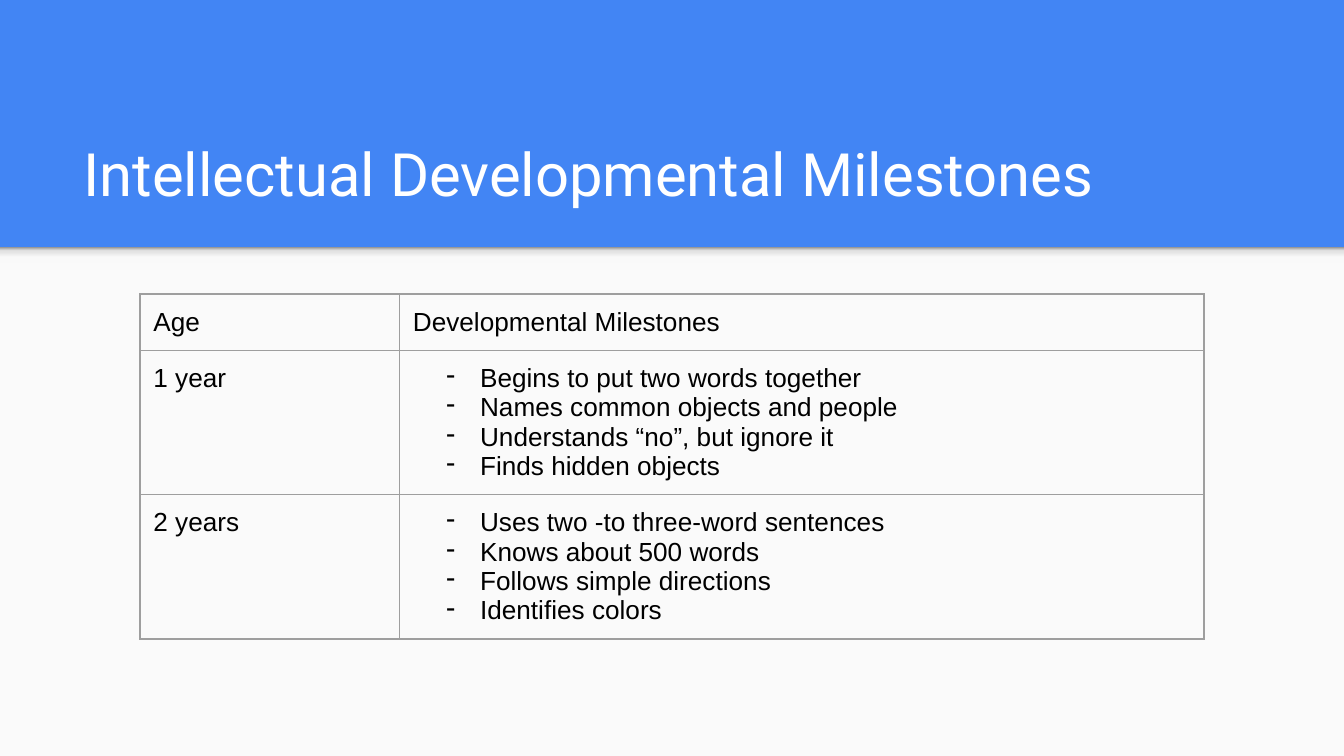
from lxml.etree import SubElement
from pptx import Presentation
from pptx.dml.color import RGBColor
from pptx.enum.shapes import MSO_SHAPE
from pptx.enum.text import MSO_ANCHOR, PP_ALIGN
from pptx.oxml.ns import qn
from pptx.util import Pt

COLORS = {
    "blue": "4285F4",
    "paper": "FAFAFA",
    "white": "FFFFFF",
    "black": "000000",
    "border": "9E9E9E",
}
SHADOW_STOPS = [(0, "F9F9F9"), (36, "F9F9F9"), (80, "DEDEDE"), (100, "999999")]
MILESTONES = [
    ("Age", ["Developmental Milestones"]),
    ("1 year", [
        "Begins to put two words together",
        "Names common objects and people",
        "Understands “no”, but ignore it",
        "Finds hidden objects",
    ]),
    ("2 years", [
        "Uses two -to three-word sentences",
        "Knows about 500 words",
        "Follows simple directions",
        "Identifies colors",
    ]),
]
COLUMN_WIDTHS = [139, 431]
ROW_HEIGHT = 30
HEADER_HEIGHT = 132.5
INSET = Pt(7.2)


def add_text(paragraph, text, font, size, color):
    run = paragraph.add_run()
    run.text = text
    run.font.name = font
    run.font.size = Pt(size)
    run.font.color.rgb = RGBColor.from_string(COLORS[color])


def add_band(slide, top, height):
    band = slide.shapes.add_shape(
        MSO_SHAPE.RECTANGLE, 0, Pt(top), Pt(720), Pt(height))
    band.shadow.inherit = False
    band.line.fill.background()
    return band


prs = Presentation()
prs.slide_width, prs.slide_height = Pt(720), Pt(405)
slide = prs.slides.add_slide(prs.slide_layouts[5])
slide.background.fill.solid()
slide.background.fill.fore_color.rgb = RGBColor.from_string(COLORS["blue"])

# Light body area below the blue header
body = add_band(slide, HEADER_HEIGHT, 405 - HEADER_HEIGHT)
body.fill.solid()
body.fill.fore_color.rgb = RGBColor.from_string(COLORS["paper"])

# Soft shadow under the header, darkest at its top edge
header_shadow = add_band(slide, HEADER_HEIGHT, 8.5)
header_shadow.fill.gradient()
header_shadow.fill.gradient_angle = 90
stop_list = header_shadow.fill.gradient_stops[0]._gs.getparent()
for default_stop in list(stop_list):
    stop_list.remove(default_stop)
for percent, color in SHADOW_STOPS:
    stop = SubElement(stop_list, qn("a:gs"), pos=str(percent * 1000))
    SubElement(stop, qn("a:srgbClr"), val=color)

# Title, moved in front of the bands
title = slide.shapes.title
slide.shapes._spTree.append(title._element)
title.left, title.top, title.width, title.height = Pt(37.5), Pt(58.5), Pt(647), Pt(60.5)
title_frame = title.text_frame
title_frame.word_wrap = True
title_frame.vertical_anchor = MSO_ANCHOR.BOTTOM
title_frame.margin_left = title_frame.margin_right = INSET
title_frame.margin_top = title_frame.margin_bottom = INSET
title_frame.paragraphs[0].alignment = PP_ALIGN.LEFT
add_text(title_frame.paragraphs[0], "Intellectual Developmental Milestones",
         "Roboto", 32, "white")

# Milestone table
table = slide.shapes.add_table(
    len(MILESTONES), len(COLUMN_WIDTHS), Pt(75), Pt(157.5),
    Pt(sum(COLUMN_WIDTHS)), Pt(ROW_HEIGHT * len(MILESTONES))).table
table.first_row = False
table.horz_banding = False
for column, width in zip(table.columns, COLUMN_WIDTHS):
    column.width = Pt(width)

for row, (age, milestones) in enumerate(MILESTONES):
    table.rows[row].height = Pt(ROW_HEIGHT)
    for column, lines in enumerate([[age], milestones]):
        cell = table.cell(row, column)
        cell.margin_left = cell.margin_right = INSET
        cell.margin_top = cell.margin_bottom = INSET

        # Borders come before the fill in the cell properties
        cell_props = cell._tc.get_or_add_tcPr()
        for side in ("lnL", "lnR", "lnT", "lnB"):
            border = SubElement(cell_props, qn(f"a:{side}"), w=str(Pt(0.75)))
            border_fill = SubElement(border, qn("a:solidFill"))
            SubElement(border_fill, qn("a:srgbClr"), val=COLORS["border"])
        cell.fill.background()

        for index, line in enumerate(lines):
            frame = cell.text_frame
            paragraph = frame.add_paragraph() if index else frame.paragraphs[0]
            add_text(paragraph, line, "Arial", 14, "black")
            if row and column:
                paragraph_props = paragraph._p.get_or_add_pPr()
                paragraph_props.set("marL", str(Pt(36)))
                paragraph_props.set("indent", str(Pt(-18)))
                SubElement(paragraph_props, qn("a:buChar"), char="-")

prs.save("out.pptx")
